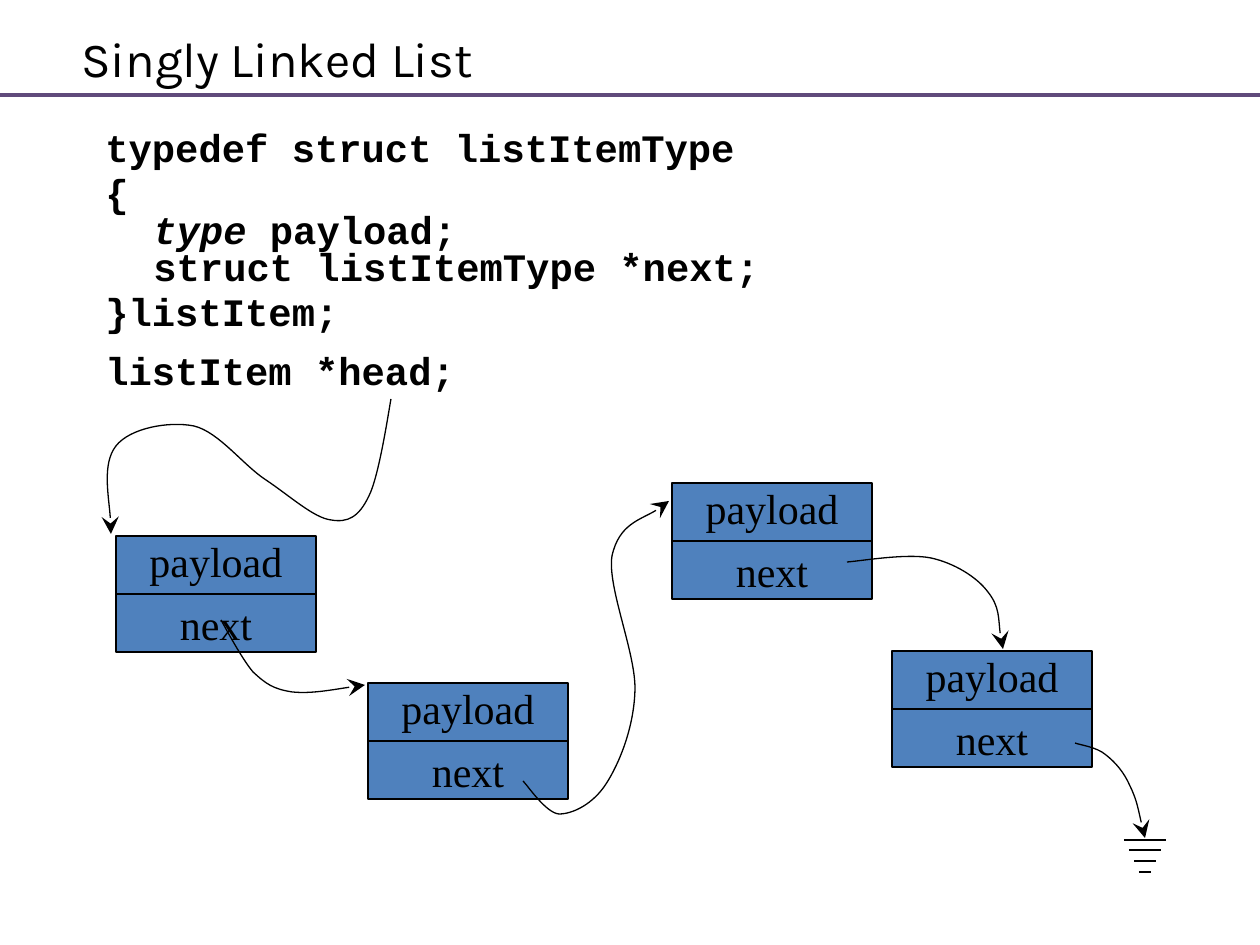
from lxml.etree import SubElement
from pptx import Presentation
from pptx.dml.color import RGBColor
from pptx.enum.shapes import MSO_CONNECTOR as Connector, MSO_SHAPE as Preset
from pptx.enum.text import MSO_ANCHOR as Anchor, MSO_AUTO_SIZE as AutoSize, PP_ALIGN as Align
from pptx.oxml.ns import qn
from pptx.util import Pt

PX = 914400 / 126
COLORS = {"ink": "000000", "node": "4F81BD", "rule": "604A7B"}
NODE_W, NODE_H, FIELD_H = 200, 116, 50


def emu(*lengths):
    return [round(length * PX) for length in lengths]


class Page:
    """The slide being drawn, with its fonts and line style."""
    title_font, code_font, node_font = "Karla", "Courier New", "Times New Roman"
    thin = 0.75

    def __init__(self, deck):
        self.slide = deck.slides.add_slide(deck.slide_layouts[6])
        self.shapes = self.slide.shapes

    def stroke(self, shape, color="ink", width=thin):
        shape.line.color.rgb = RGBColor.from_string(COLORS[color])
        shape.line.width = Pt(width)

    def frame(self, box, anchor, inset=None, parent=None):
        text_frame = (parent or self).shapes.add_textbox(*emu(*box)).text_frame
        text_frame.word_wrap = True
        text_frame.vertical_anchor = anchor
        if inset is not None:
            text_frame.margin_left = text_frame.margin_right = inset
            text_frame.margin_top = text_frame.margin_bottom = inset
        return text_frame

    def add_text(self, paragraph, text, font, size, bold=False, italic=False):
        run = paragraph.add_run()
        run.text = text
        run.font.name, run.font.size = font, Pt(size)
        run.font.bold, run.font.italic = bold, italic
        run.font.color.rgb = RGBColor.from_string(COLORS["ink"])

    def space_before(self, paragraph, percent):
        paragraph.space_before = Pt(0)
        spacing = paragraph._p.pPr.find(qn("a:spcBef"))
        spacing.clear()
        SubElement(spacing, qn("a:spcPct"), val=str(percent * 1000))

    def title(self, box, text):
        heading = self.frame(box, Anchor.MIDDLE).paragraphs[0]
        self.add_text(heading, text, self.title_font, 28)

    def code(self, box, blocks):
        """Each block is a list of lines, each line a list of (text, italic)."""
        text_frame = self.frame(box, Anchor.TOP)
        for i, lines in enumerate(blocks):
            block = text_frame.add_paragraph() if i else text_frame.paragraphs[0]
            block.line_spacing = 0.8
            if i == len(blocks) - 1:
                block.space_before = Pt(12)
            else:
                self.space_before(block, 20)
            hang, = emu(48)
            block._p.pPr.set("marL", str(hang))
            block._p.pPr.set("indent", str(-hang))
            for n, line in enumerate(lines):
                if n:
                    block.add_line_break()
                for text, italic in line:
                    self.add_text(block, text, self.code_font, 22.2, True, italic)

    def line(self, start, end, parent=None, color="ink", width=thin):
        connector = (parent or self).shapes.add_connector(
            Connector.STRAIGHT, *emu(*start, *end))
        self.stroke(connector, color, width)
        SubElement(connector._element.spPr, qn("a:effectLst"))
        return connector

    def node(self, x, y):
        group = self.shapes.add_group_shape()
        body = group.shapes.add_shape(Preset.RECTANGLE, *emu(x, y, NODE_W, NODE_H))
        body.shadow.inherit = False
        body.fill.solid()
        body.fill.fore_color.rgb = RGBColor.from_string(COLORS["node"])
        self.stroke(body)
        middle = y + NODE_H // 2
        divider = self.line((x, middle), (x + NODE_W, middle), group)
        divider.begin_connect(body, 1)
        divider.end_connect(body, 3)
        for field, offset in (("payload", 0), ("next", 63)):
            text_frame = self.frame((x, y + offset, NODE_W, FIELD_H), Anchor.MIDDLE, 0, group)
            text_frame.auto_size = AutoSize.SHAPE_TO_FIT_TEXT
            label = text_frame.paragraphs[0]
            label.alignment = Align.CENTER
            self.space_before(label, 50)
            self.add_text(label, field, self.node_font, 24)

    def pointer(self, start, *points):
        """Curved arrow; the points come in threes, as cubic Bezier segments."""
        builder = self.shapes.build_freeform(*start, scale=PX)
        builder.add_line_segments(points, close=False)
        arrow = builder.convert_to_shape()
        arrow.shadow.inherit = False
        arrow.fill.background()
        self.stroke(arrow)
        SubElement(arrow.line._get_or_add_ln(), qn("a:tailEnd"),
                   type="stealth", w="lg", len="lg")
        outline = next(arrow._element.iter(qn("a:path")))
        steps = outline.findall(qn("a:lnTo"))
        for i in range(0, len(steps), 3):
            curve = SubElement(outline, qn("a:cubicBezTo"))
            for step in steps[i:i + 3]:
                curve.append(step[0])
                outline.remove(step)

    def ground(self, center, top):
        group = self.shapes.add_group_shape()
        for i in range(4):
            half, y = 21 - 5 * i, top + 32 * i // 3
            self.line((center - half, y), (center + half, y), group)


def main():
    deck = Presentation()
    deck.slide_width, deck.slide_height = emu(1260, 945)
    page = Page(deck)

    # Heading and type declaration
    page.title((69, 21, 1071, 73), "Singly Linked List")
    page.code((93, 126, 1071, 290), [
        [[("typedef struct listItemType", False)]],
        [[("{", False)],
         [("type", True), (" payload;", False)],
         [("struct listItemType *next;", False)]],
        [[("}listItem;", False)]],
        [[("listItem *head;", False)]],
    ])

    # List items
    for corner in ((116, 536), (892, 651), (368, 683), (672, 483)):
        page.node(*corner)

    # Second item to third, first to second
    page.pointer((523, 781), (528, 786), (546, 813), (559, 814),
                 (573, 814), (593, 804), (606, 784),
                 (619, 764), (634, 728), (635, 690),
                 (636, 653), (607, 587), (612, 556),
                 (619, 524), (658, 513), (669, 501))
    page.pointer((221, 620), (226, 629), (242, 659), (253, 672),
                 (266, 684), (273, 689), (292, 692),
                 (311, 694), (350, 687), (365, 685))

    # Null terminator and the last item's pointer to it
    page.ground(1145, 840)
    page.pointer((1075, 743), (1080, 745), (1097, 747), (1106, 755),
                 (1115, 762), (1124, 772), (1130, 786),
                 (1137, 800), (1142, 827), (1145, 838))

    # Head to first item, third item to last
    page.pointer((391, 399), (388, 416), (379, 476), (369, 496),
                 (359, 517), (348, 523), (331, 520),
                 (314, 518), (290, 496), (266, 480),
                 (243, 465), (219, 432), (194, 426),
                 (169, 421), (130, 428), (116, 446),
                 (102, 464), (112, 517), (111, 534))
    page.pointer((847, 562), (861, 561), (907, 553), (931, 558),
                 (954, 563), (977, 577), (988, 592),
                 (1000, 607), (999, 636), (1003, 649))

    # Rule under the heading
    page.line((0, 95), (1260, 95), color="rule", width=2.5)

    deck.save("out.pptx")


if __name__ == "__main__":
    main()
